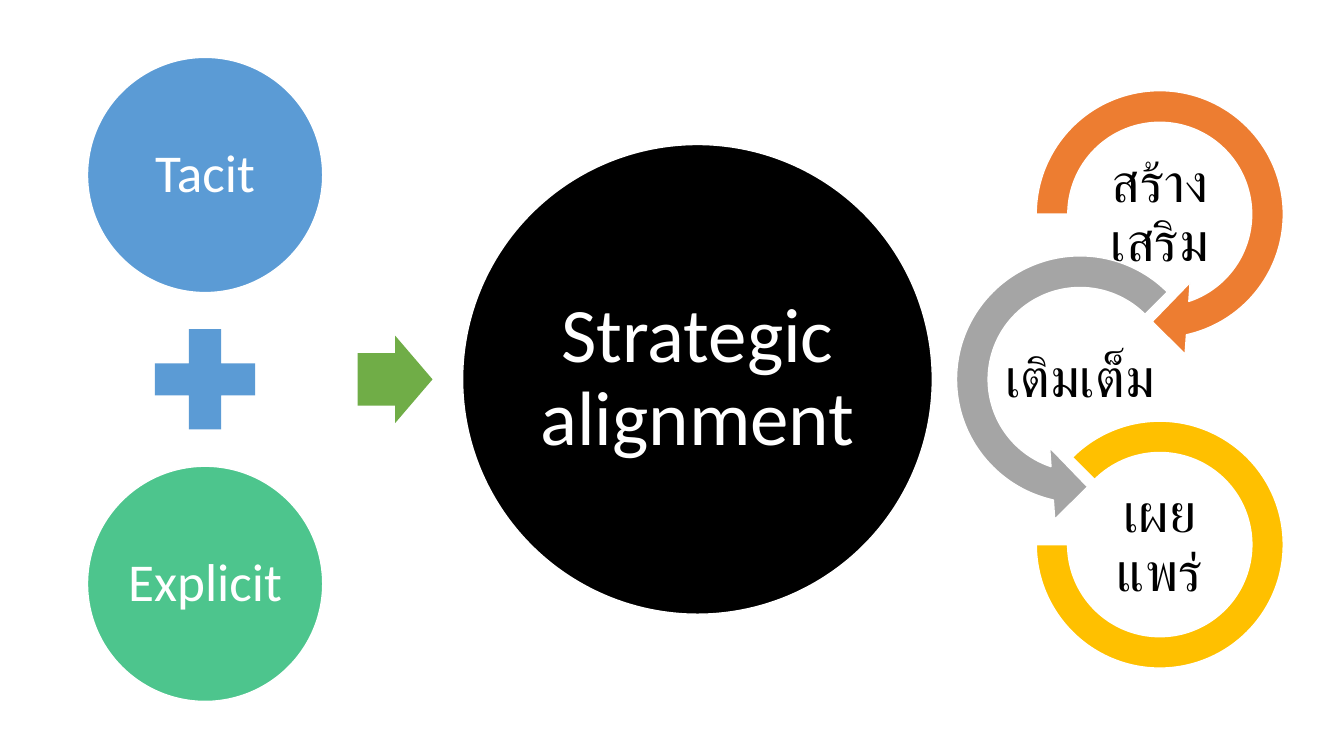
import pptx
import pptx.util
import pptx.dml.color
import pptx.enum.lang
import pptx.enum.shapes
import pptx.enum.text

Pt = pptx.util.Pt
RGBColor = pptx.dml.color.RGBColor
SHAPE = pptx.enum.shapes.MSO_SHAPE
LANG = pptx.enum.lang.MSO_LANGUAGE_ID

WHITE = RGBColor(0xFF, 0xFF, 0xFF)
BLACK = RGBColor(0x00, 0x00, 0x00)
BLUE = RGBColor(0x5B, 0x9B, 0xD5)
MINT = RGBColor(0x4D, 0xC5, 0x8D)
GREEN = RGBColor(0x70, 0xAD, 0x47)
ORANGE = RGBColor(0xED, 0x7D, 0x31)
GRAY = RGBColor(0xA5, 0xA5, 0xA5)
GOLD = RGBColor(0xFF, 0xC0, 0x00)

MIDDLE_Y = 271      # shared horizontal axis
SOURCE_X = 146.5    # centre of the left column
SOURCE_STEP = 146   # from the plus to each circle
STEP_Y = 118        # between the process rings


def box(cx, cy, width, height):
    """Left, top, width and height of a box around a centre."""
    return Pt(cx - width / 2), Pt(cy - height / 2), Pt(width), Pt(height)


def write_text(sp, text, size, color, margin, language=LANG.ENGLISH_US):
    tf = sp.text_frame
    tf.word_wrap = True
    tf.vertical_anchor = pptx.enum.text.MSO_ANCHOR.MIDDLE
    tf.margin_left = tf.margin_right = Pt(margin)
    tf.margin_top = tf.margin_bottom = Pt(margin)
    p = tf.paragraphs[0]
    p.alignment = pptx.enum.text.PP_ALIGN.CENTER
    p.line_spacing = 0.9
    r = p.add_run()
    r.text = text
    r.font.name = "Calibri"
    r.font.size = Pt(size)
    r.font.color.rgb = color
    r.font.language_id = language


def add_figure(s, kind, cx, cy, width, height, fill, outlined=True, adjustments=()):
    sp = s.shapes.add_shape(kind, *box(cx, cy, width, height))
    sp.shadow.inherit = False
    sp.fill.solid()
    sp.fill.fore_color.rgb = fill
    if outlined:
        sp.line.color.rgb = WHITE
        sp.line.width = Pt(1)
    else:
        sp.line.fill.background()
    for i, value in enumerate(adjustments):
        sp.adjustments[i] = value
    return sp


def add_circle(s, text, cx, cy, diameter, fill, size, margin):
    sp = add_figure(s, SHAPE.OVAL, cx, cy, diameter, diameter, fill)
    write_text(sp, text, size, WHITE, margin)


def add_ring(s, text, kind, cx, cy, diameter, fill, adjustments):
    add_figure(s, kind, cx, cy, diameter, diameter, fill, adjustments=adjustments)
    label = s.shapes.add_textbox(*box(cx, cy, 114, 57))
    write_text(label, text, 39, BLACK, 2.5, LANG.THAI)


def main():
    prs = pptx.Presentation()
    prs.slide_width, prs.slide_height = Pt(960), Pt(540)
    s = prs.slides.add_slide(prs.slide_layouts[6])

    # Two kinds of knowledge, added together
    add_circle(s, "Tacit", SOURCE_X, MIDDLE_Y - SOURCE_STEP, 168, BLUE, 38, 3.8)
    add_figure(s, SHAPE.MATH_PLUS, SOURCE_X, MIDDLE_Y, 97.4, 97.4, BLUE, outlined=False)
    add_circle(s, "Explicit", SOURCE_X, MIDDLE_Y + SOURCE_STEP, 168, MINT, 38, 3.8)

    # Result
    add_figure(s, SHAPE.RIGHT_ARROW, 282.2, MIDDLE_Y, 53.5, 62.6, GREEN,
               outlined=False, adjustments=(0.6, 0.5))
    add_circle(s, "Strategic alignment", 498.2, MIDDLE_Y, 335.5, BLACK, 55, 5.5)

    # Process rings: thickness, head angle, end, start, head width
    rings = (
        ("สร้างเสริม", SHAPE.CIRCULAR_ARROW, 828.4, 205.2, ORANGE,
         (0.11, 11.42, 45, 108, 0.125)),
        ("เติมเต็ม", SHAPE.LEFT_CIRCULAR_ARROW, 771.5, 205.2, GRAY,
         (0.11, 11.42, 63, 189, 0.125)),
        ("เผยแพร่", SHAPE.BLOCK_ARC, 828.4, 176.4, GOLD, (135, 108, 0.127)),
    )
    for i, (text, kind, cx, diameter, fill, adjustments) in enumerate(rings):
        cy = MIDDLE_Y + (i - 1) * STEP_Y
        add_ring(s, text, kind, cx, cy, diameter, fill, adjustments)

    prs.save("out.pptx")


if __name__ == "__main__":
    main()
